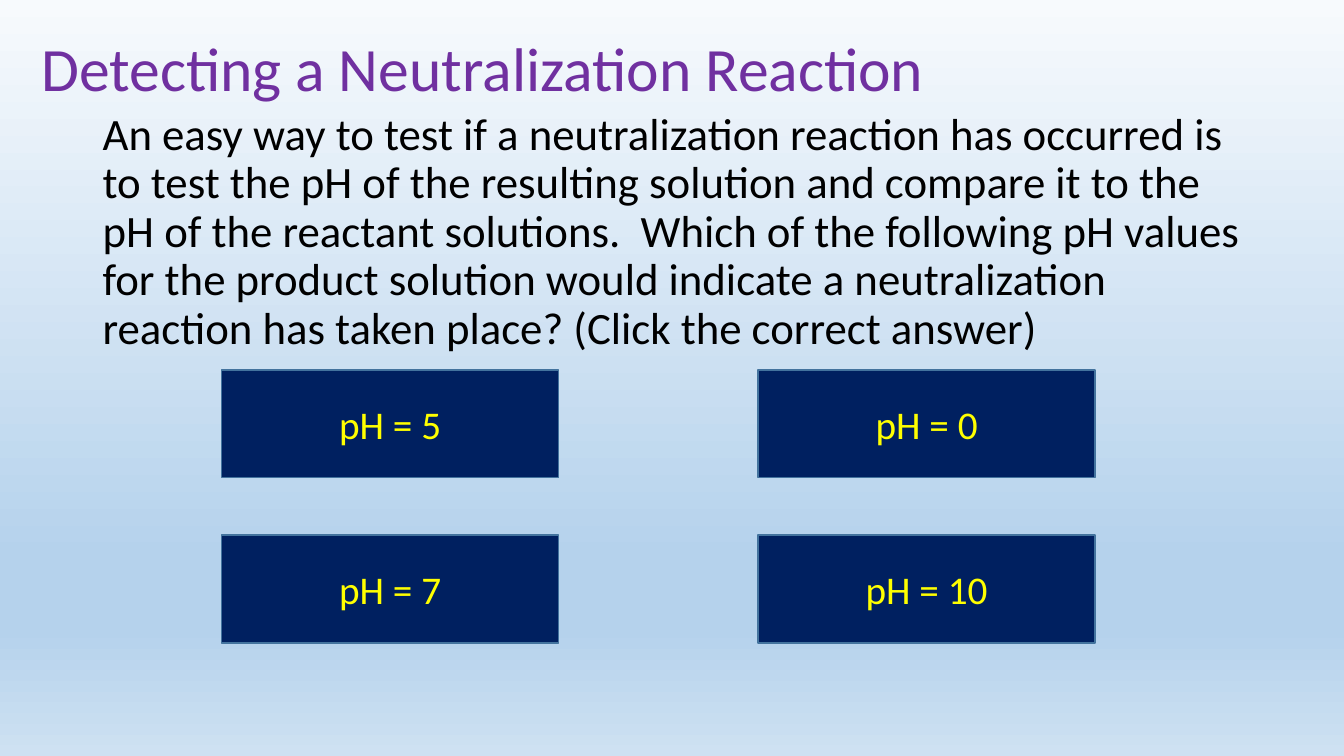
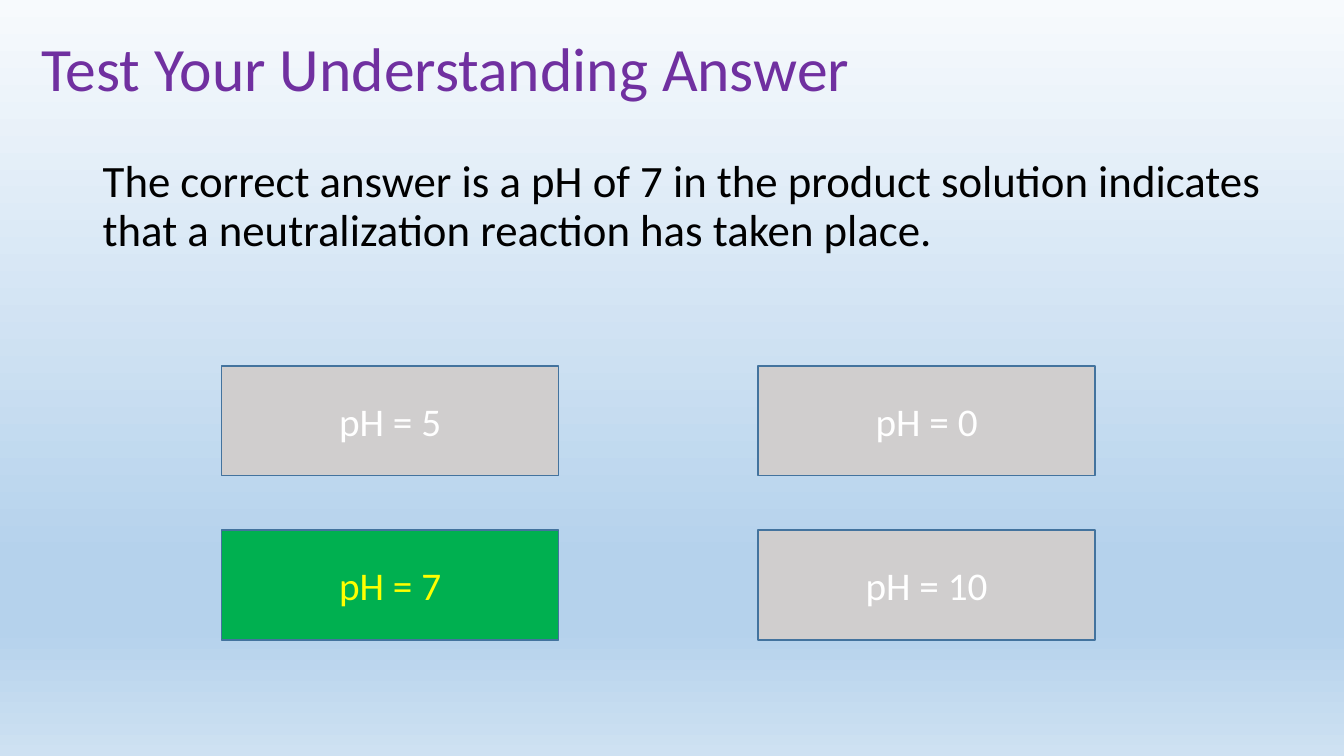
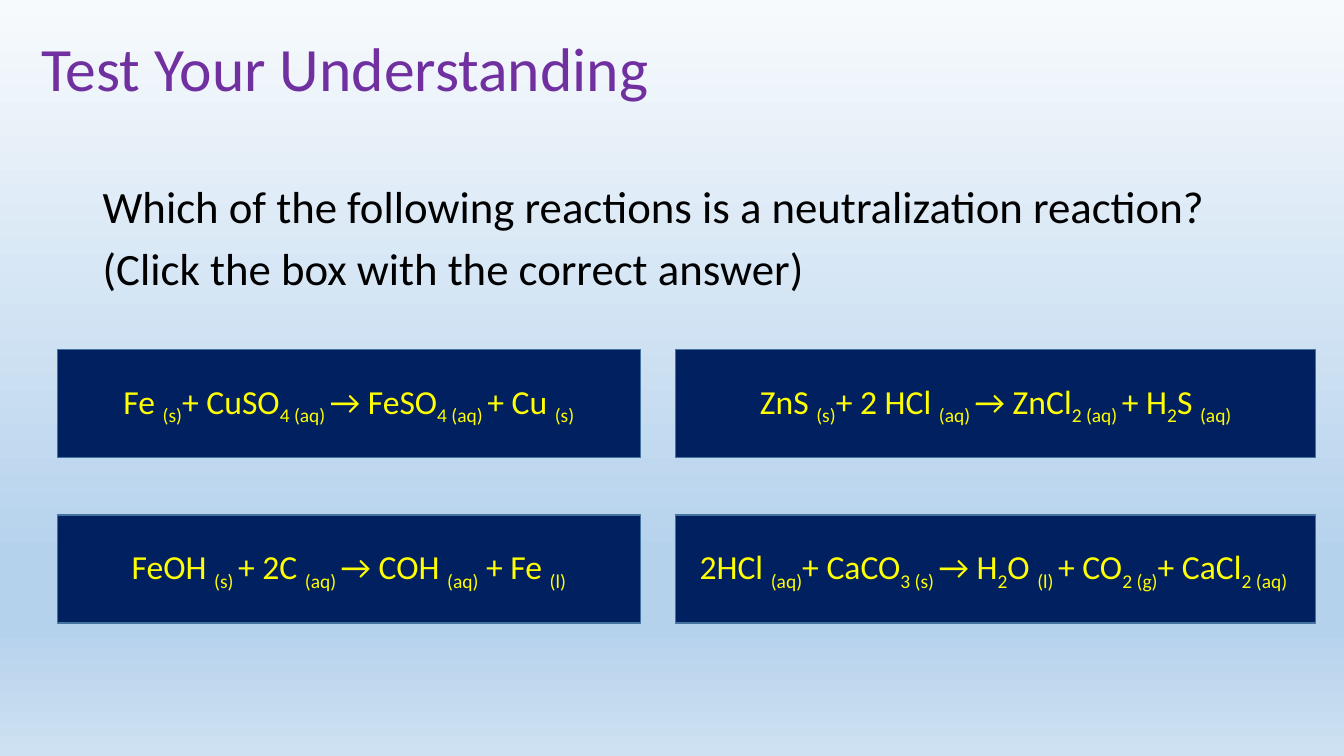
from lxml.etree import SubElement
from pptx import Presentation
from pptx.dml.color import RGBColor
from pptx.enum.shapes import MSO_SHAPE as Shape
from pptx.enum.text import MSO_ANCHOR as Anchor, PP_ALIGN as Align
from pptx.oxml.ns import qn
from pptx.util import Inches, Pt

PURPLE = RGBColor(0x70, 0x30, 0xA0)
BLACK = RGBColor(0x00, 0x00, 0x00)
WHITE = RGBColor(0xFF, 0xFF, 0xFF)
YELLOW = RGBColor(0xFF, 0xFF, 0x00)
NAVY = RGBColor(0x00, 0x20, 0x60)
GREY = RGBColor(0xD0, 0xCE, 0xCE)
GREEN = RGBColor(0x00, 0xB0, 0x50)
EDGE = RGBColor(0x43, 0x73, 0x9E)
SKY = [
    (0, RGBColor(0xF7, 0xFA, 0xFD)),
    (74, RGBColor(0xB5, 0xD2, 0xEC)),
    (83, RGBColor(0xB5, 0xD2, 0xEC)),
    (100, RGBColor(0xCE, 0xE1, 0xF2)),
]
FONT = "Calibri"
PH_COLUMNS = [(2.2, 3.34), (7.52, 3.34)]
REACTION_COLUMNS = [(0.57, 5.78), (6.7, 6.35)]
PH_VALUES = ["pH = 5", "pH = 0", "pH = 7", "pH = 10"]


def write(frame, text, size, color, align=Align.LEFT, anchor=Anchor.TOP,
          line_spacing=None, space_before=0):
    """Fill a text frame: newlines part paragraphs, _underscores_ enclose subscripts."""
    frame.word_wrap = True
    frame.vertical_anchor = anchor
    for index, line in enumerate(text.split("\n")):
        para = frame.add_paragraph() if index else frame.paragraphs[0]
        para.alignment = align
        para.line_spacing = line_spacing
        para.space_before = Pt(space_before)
        for position, part in enumerate(line.split("_")):
            if not part:
                continue
            span = para.add_run()
            span.text = part
            span.font.name = FONT
            span.font.size = Pt(size)
            span.font.color.rgb = color
            if position % 2:
                span.font._element.set("baseline", "-25000")


class Quiz:
    """Holds the deck style and the current page."""

    def __init__(self):
        self.deck = Presentation()
        self.deck.slide_width = Inches(13.33)
        self.deck.slide_height = Inches(7.5)
        self.page = None
        self.paint_background()

    def paint_background(self):
        master = self.deck.slide_master
        fill = master.background.fill
        fill.gradient()
        fill.gradient_angle = 270
        stops = master.element.find(".//" + qn("a:gsLst"))
        for stop in list(stops):
            stops.remove(stop)
        for percent, color in SKY:
            stop = SubElement(stops, qn("a:gs"), pos=str(percent * 1000))
            SubElement(stop, qn("a:srgbClr"), val=str(color))

    def add_page(self, title):
        self.page = self.deck.slides.add_slide(self.deck.slide_layouts[6])
        self.text_box(title, -0.02, left=0.31, height=1.45, size=44,
                      color=PURPLE, anchor=Anchor.MIDDLE, line_spacing=0.9)

    def text_box(self, text, top, left=0.92, width=11.5, height=1.4, **style):
        box = self.page.shapes.add_textbox(
            Inches(left), Inches(top), Inches(width), Inches(height))
        write(box.text_frame, text, **style)

    def question(self, text, top, **place):
        self.text_box(text, top, size=32, color=BLACK, line_spacing=0.9,
                      space_before=10, **place)

    def answer(self, text, left, top, width, height, size, fill, color):
        box = self.page.shapes.add_shape(
            Shape.RECTANGLE, Inches(left), Inches(top), Inches(width), Inches(height))
        box.shadow.inherit = False
        box.fill.solid()
        box.fill.fore_color.rgb = fill
        box.line.color.rgb = EDGE
        box.line.width = Pt(1)
        write(box.text_frame, text, size, color, Align.CENTER, Anchor.MIDDLE)

    def answer_grid(self, texts, columns, top, height=1.07, pitch=1.64, size=28,
                    correct=None):
        """Lay answers out in two columns; naming the correct one greys out the others."""
        for index, text in enumerate(texts):
            row, column = divmod(index, len(columns))
            left, width = columns[column]
            if correct is None:
                fill, color = NAVY, YELLOW
            elif text == correct:
                fill, color = GREEN, YELLOW
            else:
                fill, color = GREY, WHITE
            self.answer(text, left, top + row * pitch, width, height, size, fill, color)


def main():
    quiz = Quiz()

    quiz.add_page("Detecting a Neutralization Reaction")
    quiz.question(
        "An easy way to test if a neutralization reaction has occurred is to test "
        "the pH of the resulting solution and compare it to the pH of the reactant "
        "solutions.  Which of the following pH values for the product solution would "
        "indicate a neutralization reaction has taken place? (Click the correct answer)",
        1.06, height=5.95)
    quiz.answer_grid(PH_VALUES, PH_COLUMNS, 3.67)

    quiz.add_page("Test Your Understanding Answer")
    quiz.question(
        "The correct answer is a pH of 7 in the product solution indicates that "
        "a neutralization reaction has taken place.",
        1.53, width=11.75, height=5.13)
    quiz.answer_grid(PH_VALUES, PH_COLUMNS, 3.63, height=1.09, pitch=1.63,
                     correct="pH = 7")

    quiz.add_page("Test Your Understanding")
    quiz.question(
        "Which of the following reactions is a neutralization reaction?\n"
        "(Click the box with the correct answer)", 1.78)
    quiz.answer_grid([
        "Fe _(s)_+ CuSO_4 (aq) _→ FeSO_4 (aq) _+ Cu _(s)_",
        "ZnS _(s)_+ 2 HCl _(aq) _→ ZnCl_2 (aq) _+ H_2_S _(aq)_",
        "FeOH _(s) _+ 2C _(aq) _→ COH _(aq)_ + Fe _(l)_",
        "2HCl _(aq)_+ CaCO_3 (s) _→ H_2_O _(l) _+ CO_2 (g)_+ CaCl_2 (aq) _",
    ], REACTION_COLUMNS, 3.47, size=24)

    quiz.deck.save("out.pptx")


if __name__ == "__main__":
    main()
